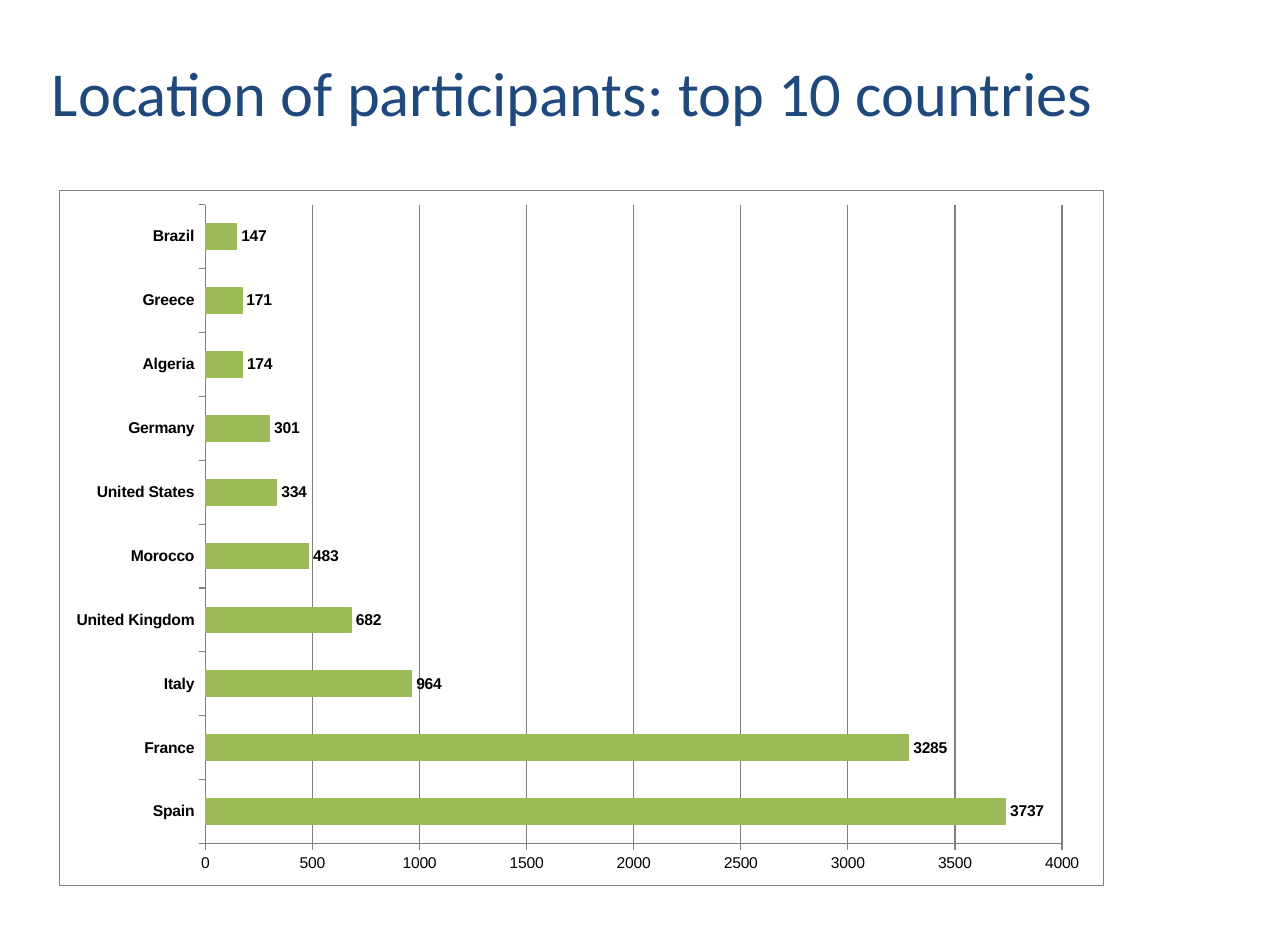
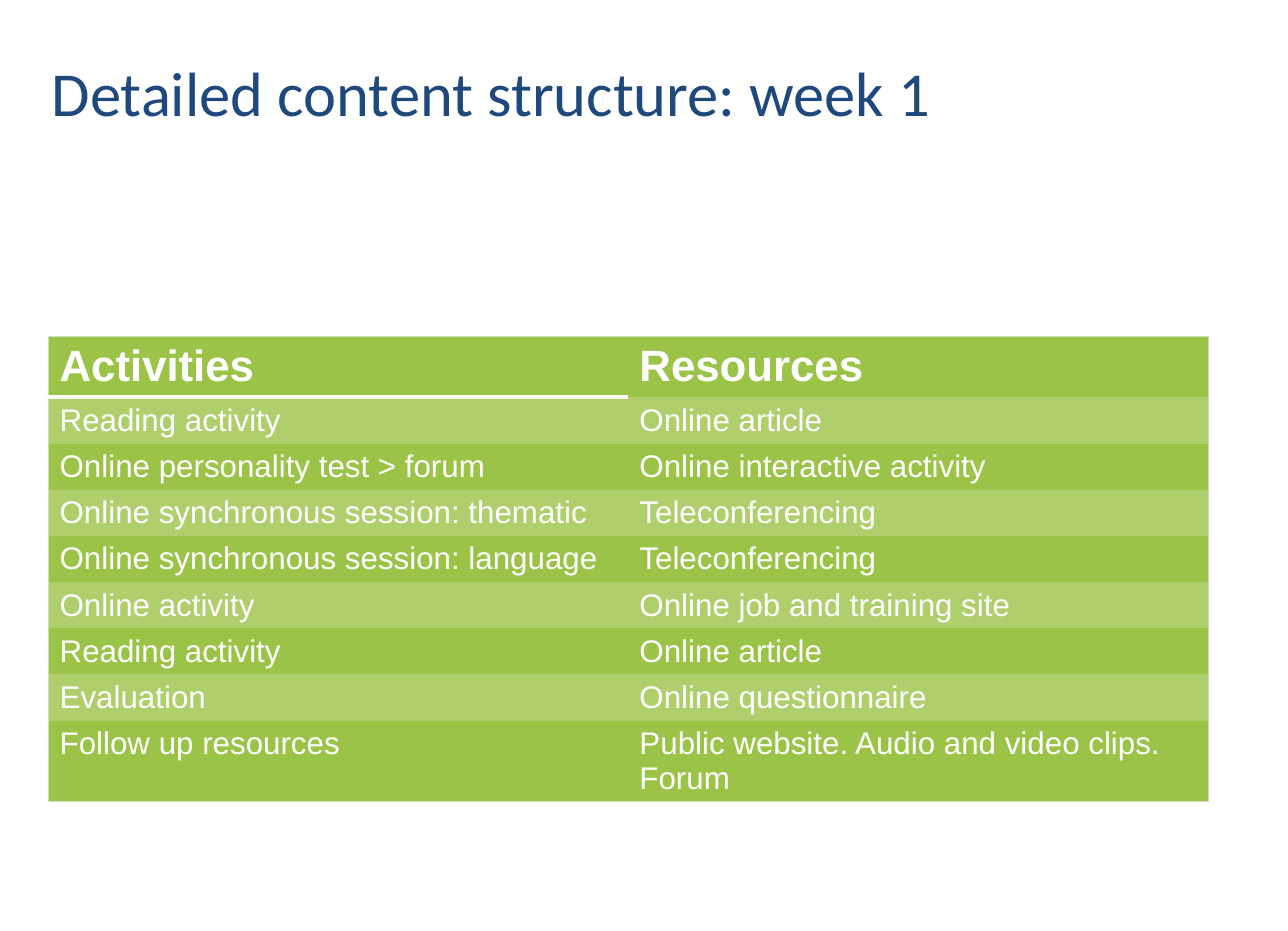
import pptx
import pptx.chart.data
import pptx.dml.color
import pptx.enum.chart
import pptx.enum.text
import pptx.oxml
import pptx.oxml.ns
import pptx.util

EMU_PER_PX = 9144  # 100 px to the inch
NAVY, WHITE, BLACK, GREY = "1F497D", "FFFFFF", "000000", "808080"
BAR_GREEN, ROW_GREEN, BAND_GREEN, EDGE_GREEN = "9BBB59", "9BC348", "AFCF6D", "D0DCBF"
PLAIN_TABLE = "{2D5ABB26-0587-4C30-8999-92F81FD0307C}"
NS = pptx.oxml.ns.nsdecls("a", "c")


def px(n):
    return pptx.util.Emu(n * EMU_PER_PX)


def rgb(color):
    return pptx.dml.color.RGBColor.from_string(color)


def line_xml(tag, color, width):
    return (f'<a:{tag} {NS} w="{int(width * 12700)}"><a:solidFill>'
            f'<a:srgbClr val="{color}"/></a:solidFill></a:{tag}>')


class Deck:
    """Holds the shared style and the current slide."""

    def __init__(self, width, height):
        self.prs = pptx.Presentation()
        self.prs.slide_width, self.prs.slide_height = px(width), px(height)

    def font(self, font, size, color, bold=False, name="Arial"):
        font.name, font.size, font.bold = name, pptx.util.Pt(size), bold
        font.color.rgb = rgb(color)

    def line(self, line, color, width=0.75):
        line.color.rgb, line.width = rgb(color), pptx.util.Pt(width)

    def slide(self, title):
        self.s = self.prs.slides.add_slide(self.prs.slide_layouts[5])
        sp = self.s.shapes.title
        sp.left, sp.top, sp.width, sp.height = map(px, (36, 43, 1029, 76))
        tf = sp.text_frame
        tf.text = title
        tf.word_wrap = True
        tf.auto_size = pptx.enum.text.MSO_AUTO_SIZE.NONE
        tf.vertical_anchor = pptx.enum.text.MSO_ANCHOR.MIDDLE
        p = tf.paragraphs[0]
        p.alignment = pptx.enum.text.PP_ALIGN.LEFT
        self.font(p.font, 40, NAVY, name="Calibri")

    def bar_chart(self, box, values, top, step, plot_box):
        data = pptx.chart.data.CategoryChartData()
        data.categories = list(values)
        data.add_series("Series 1", list(values.values()))
        chart = self.s.shapes.add_chart(
            pptx.enum.chart.XL_CHART_TYPE.BAR_CLUSTERED, *map(px, box), data).chart
        chart.has_legend = chart.has_title = False
        self.font(chart.font, 10, BLACK)

        # Axes
        value_axis, category_axis = chart.value_axis, chart.category_axis
        value_axis.minimum_scale, value_axis.maximum_scale = 0, top
        value_axis.major_unit = step
        value_axis.has_major_gridlines = True
        self.line(value_axis.major_gridlines.format.line, GREY)
        for axis in (value_axis, category_axis):
            axis.major_tick_mark = pptx.enum.chart.XL_TICK_MARK.OUTSIDE
            self.line(axis.format.line, GREY)
            self.font(axis.tick_labels.font, 10, BLACK, bold=axis is category_axis)

        # Bars and their values
        plot = chart.plots[0]
        plot.gap_width, plot.vary_by_categories = 150, False
        bars = plot.series[0].format
        bars.fill.solid()
        bars.fill.fore_color.rgb = rgb(BAR_GREEN)
        self.line(bars.line, BAR_GREEN)
        plot.has_data_labels = True
        labels = plot.data_labels
        labels.show_value = True
        labels.position = pptx.enum.chart.XL_LABEL_POSITION.OUTSIDE_END
        self.font(labels.font, 10, BLACK, bold=True)

        # Frame and plot position
        root = chart._chartSpace
        root.find(pptx.oxml.ns.qn("c:txPr")).addprevious(pptx.oxml.parse_xml(
            f'<c:spPr {NS}>{line_xml("ln", GREY, 0.75)}</c:spPr>'))
        area = root.chart.plotArea
        for old in area.findall(pptx.oxml.ns.qn("c:layout")):
            area.remove(old)
        modes = '<c:xMode val="edge"/><c:yMode val="edge"/>'
        sizes = "".join(f'<c:{k} val="{v}"/>' for k, v in zip("xywh", plot_box))
        area.insert(0, pptx.oxml.parse_xml(
            f'<c:layout {NS}><c:manualLayout><c:layoutTarget val="inner"/>'
            f'{modes}{sizes}</c:manualLayout></c:layout>'))

    def table(self, left, top, col_width, heights, rows):
        last_row, last_col = len(rows) - 1, len(rows[0]) - 1
        table = self.s.shapes.add_table(
            len(rows), len(rows[0]), px(left), px(top),
            px(col_width * len(rows[0])), px(sum(heights))).table
        table._tbl.tblPr.find(pptx.oxml.ns.qn("a:tableStyleId")).text = PLAIN_TABLE
        for col in table.columns:
            col.width = px(col_width)
        for i, (height, row) in enumerate(zip(heights, rows)):
            table.rows[i].height = px(height)
            for j, text in enumerate(row):
                cell = table.cell(i, j)
                cell.text = text
                self.font(cell.text_frame.paragraphs[0].font,
                          20 if i else 28, WHITE, bold=i == 0)
                cell.fill.solid()
                cell.fill.fore_color.rgb = rgb(BAND_GREEN if i % 2 else ROW_GREEN)

                # Outer edge, and a white rule under the first heading
                edges = {"lnL": j == 0, "lnR": j == last_col,
                         "lnT": i == 0, "lnB": i == last_row}
                borders = [line_xml(tag, EDGE_GREEN, 0.75)
                           for tag, outer in edges.items() if outer]
                if i == j == 0:
                    borders.append(line_xml("lnB", WHITE, 3))
                for n, border in enumerate(borders):
                    cell._tc.tcPr.insert(n, pptx.oxml.parse_xml(border))


def main():
    deck = Deck(1144, 827)

    # Participants by country
    deck.slide("Location of participants: top 10 countries")
    deck.bar_chart((52, 169, 929, 618), {
        "Spain": 3737, "France": 3285, "Italy": 964, "United Kingdom": 682,
        "Morocco": 483, "United States": 334, "Germany": 301, "Algeria": 174,
        "Greece": 171, "Brazil": 147,
    }, top=4000, step=500, plot_box=(0.14, 0.02, 0.82, 0.92))

    # Week 1 activities
    deck.slide("Detailed content structure: week 1")
    deck.table(43, 299, 515, [54] + [41] * 7 + [72], [
        ("Activities", "Resources"),
        ("Reading activity", "Online article"),
        ("Online personality test > forum", "Online interactive activity"),
        ("Online synchronous session: thematic", "Teleconferencing"),
        ("Online synchronous session: language", "Teleconferencing"),
        ("Online activity", "Online job and training site"),
        ("Reading activity", "Online article"),
        ("Evaluation", "Online questionnaire"),
        ("Follow up resources", "Public website. Audio and video clips. Forum"),
    ])

    deck.prs.save("out.pptx")


if __name__ == "__main__":
    main()
